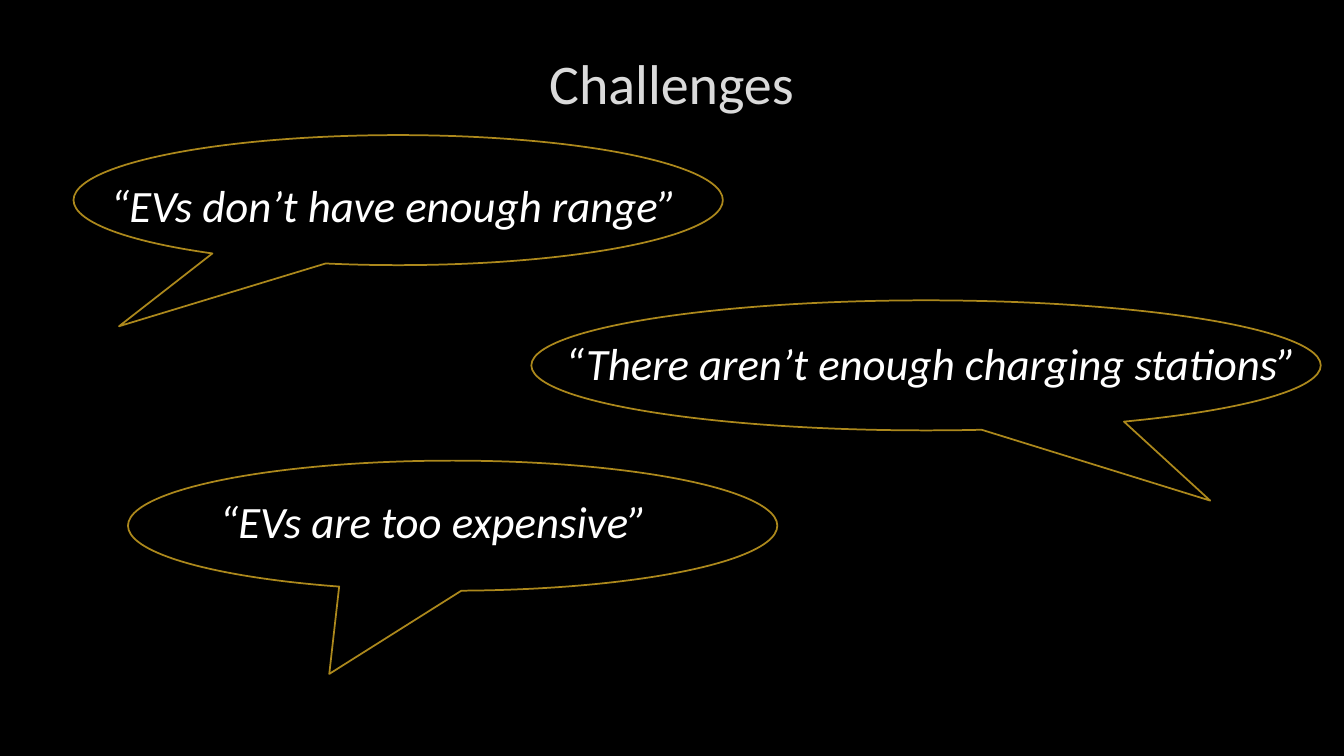
from typing import NamedTuple

import pptx
import pptx.dml.color
import pptx.enum.shapes
import pptx.enum.text
import pptx.util

SCALE = 9144  # EMU in one px, 100 px to the inch
FONT = "Calibri"
BLACK = pptx.dml.color.RGBColor(0x00, 0x00, 0x00)
WHITE = pptx.dml.color.RGBColor(0xFF, 0xFF, 0xFF)
GREY = pptx.dml.color.RGBColor(0xDA, 0xDA, 0xDA)
GOLD = pptx.dml.color.RGBColor(0xAC, 0x88, 0x1C)


class Box(NamedTuple):
    left: int
    top: int
    width: int
    height: int

    def emu(self) -> list[int]:
        return [side * SCALE for side in self]


class Label(NamedTuple):
    text: str
    box: Box
    size: int
    color: pptx.dml.color.RGBColor


class Bubble(NamedTuple):
    box: Box
    tip: tuple[float, float]  # offset from the centre, as a share of the size


TITLE = Label("Challenges", Box(100, 28, 1132, 106), 40, GREY)
QUOTES = [
    Label("“EVs don’t have enough range”", Box(100, 171, 593, 64), 32, WHITE),
    Label("“There aren’t enough charging stations”", Box(551, 328, 759, 64), 32, WHITE),
    Label("“EVs are too expensive”", Box(208, 485, 458, 64), 32, WHITE),
]
BUBBLES = [
    Bubble(Box(73, 134, 644, 129), (-0.43, 0.97)),
    Bubble(Box(127, 457, 644, 129), (-0.19, 1.14)),
    Bubble(Box(527, 298, 783, 129), (0.36, 1.04)),
]


def add_label(slide: pptx.slide.Slide, label: Label) -> pptx.text.text.TextFrame:
    frame = slide.shapes.add_textbox(*label.box.emu()).text_frame
    line = frame.paragraphs[0]
    line.text = label.text
    line.font.name = FONT
    line.font.size = pptx.util.Pt(label.size)
    line.font.color.rgb = label.color
    return frame


def add_title(slide: pptx.slide.Slide, label: Label) -> None:
    frame = add_label(slide, label)
    frame.word_wrap = True
    frame.vertical_anchor = pptx.enum.text.MSO_ANCHOR.MIDDLE
    frame.paragraphs[0].alignment = pptx.enum.text.PP_ALIGN.CENTER


def add_quote(slide: pptx.slide.Slide, label: Label) -> None:
    frame = add_label(slide, label)
    frame.word_wrap = False
    frame.auto_size = pptx.enum.text.MSO_AUTO_SIZE.SHAPE_TO_FIT_TEXT
    frame.paragraphs[0].font.italic = True


def add_bubble(slide: pptx.slide.Slide, bubble: Bubble) -> None:
    kind = pptx.enum.shapes.MSO_SHAPE.OVAL_CALLOUT
    shape = slide.shapes.add_shape(kind, *bubble.box.emu())
    shape.adjustments[0], shape.adjustments[1] = bubble.tip
    shape.shadow.inherit = False
    shape.fill.background()
    shape.line.color.rgb = GOLD
    shape.line.width = pptx.util.Pt(1.25)


def main() -> None:
    # Black slide
    deck = pptx.Presentation()
    deck.slide_width, deck.slide_height = 1333 * SCALE, 750 * SCALE
    slide = deck.slides.add_slide(deck.slide_layouts[6])
    slide.background.fill.solid()
    slide.background.fill.fore_color.rgb = BLACK

    # Heading, quotes and the speech bubbles around them
    add_title(slide, TITLE)
    for quote in QUOTES:
        add_quote(slide, quote)
    for bubble in BUBBLES:
        add_bubble(slide, bubble)

    deck.save("out.pptx")


if __name__ == "__main__":
    main()
